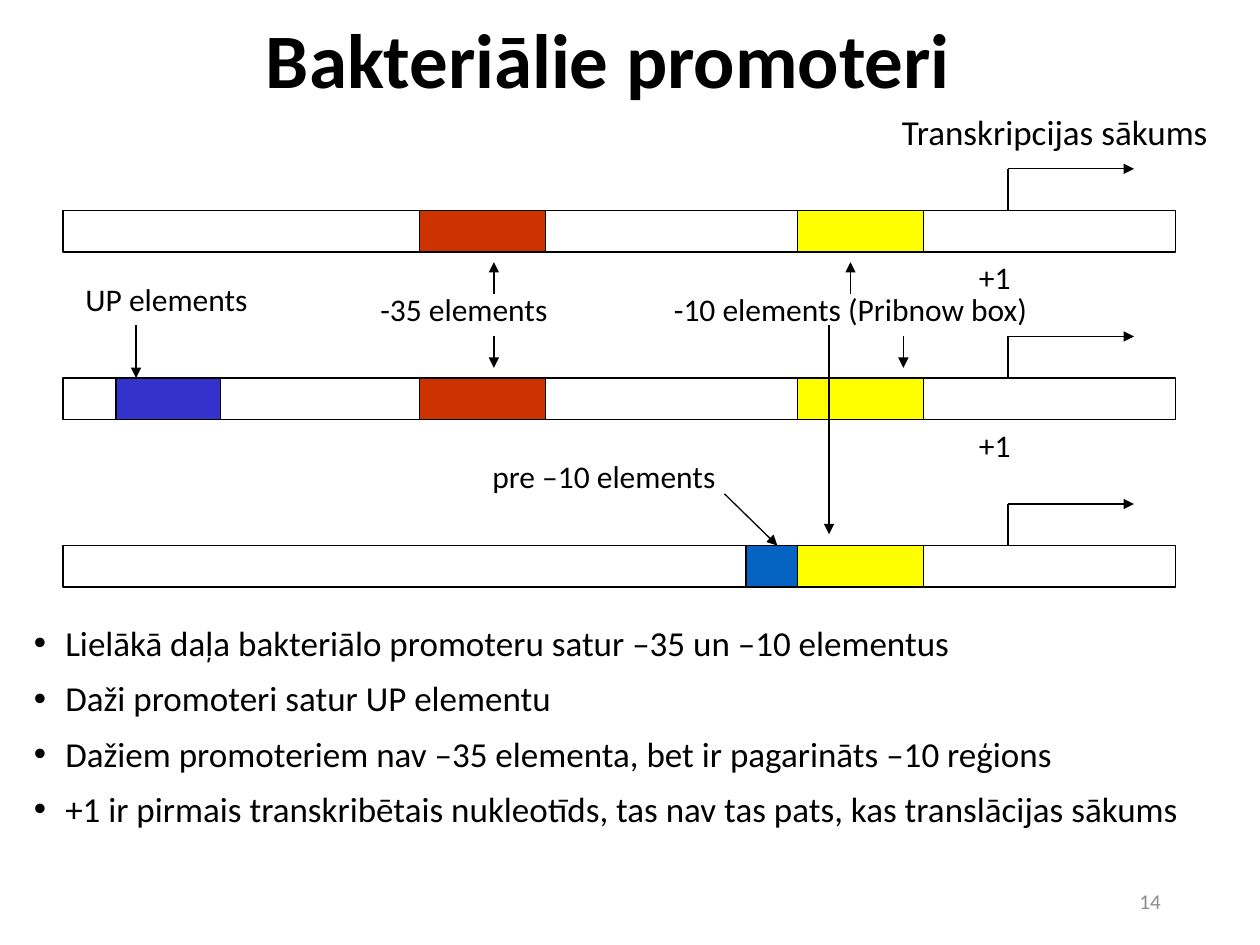
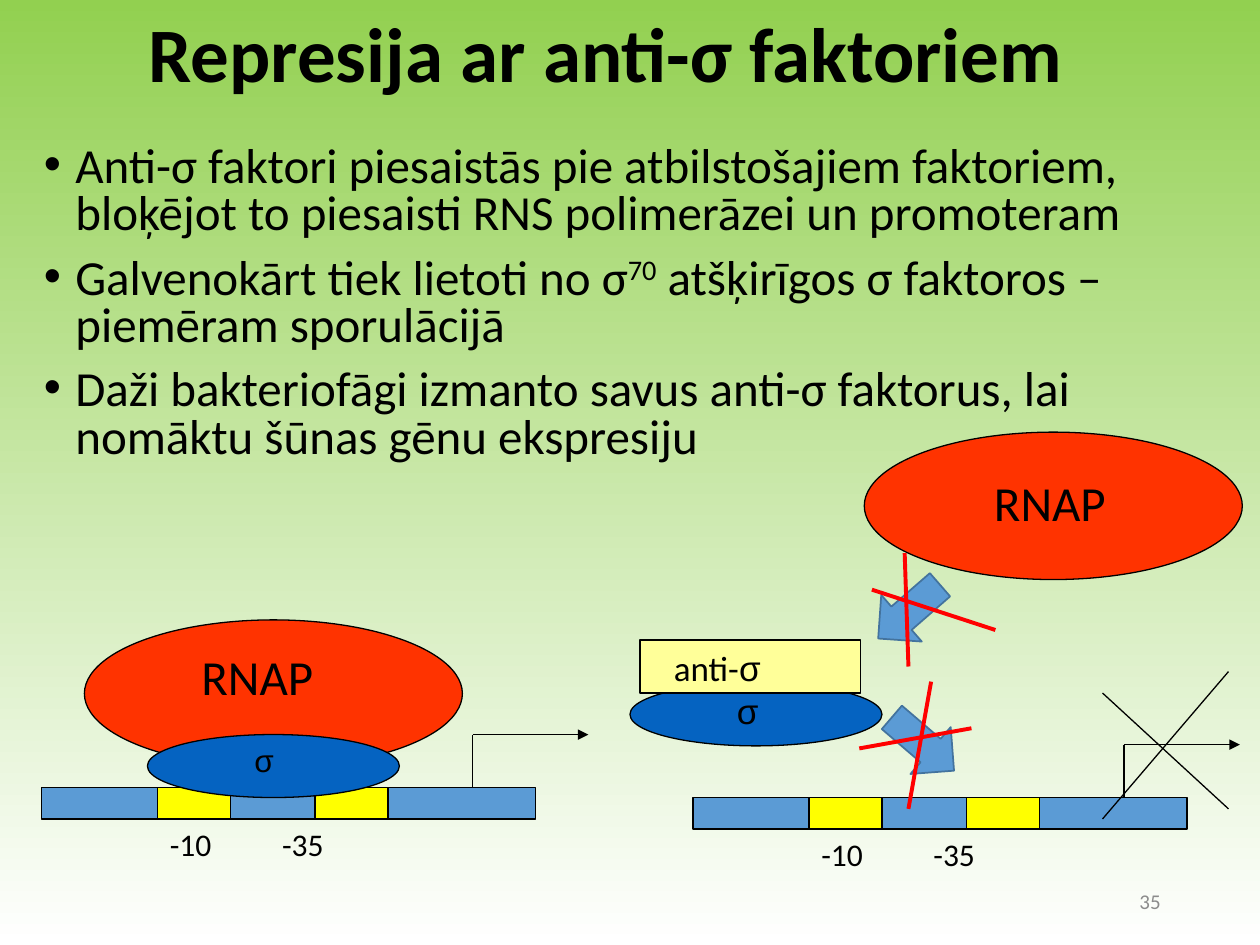
from itertools import pairwise
from lxml.etree import SubElement
from pptx import Presentation
from pptx.dml.color import RGBColor
from pptx.enum.shapes import MSO_CONNECTOR, MSO_SHAPE
from pptx.enum.text import MSO_ANCHOR, PP_ALIGN
from pptx.oxml.ns import qn
from pptx.util import Inches, Pt

BLACK, WHITE, GREY = "000000", "FFFFFF", "8C8C8C"
RED, YELLOW, BLUE = "CC3300", "FFFF00", "0563C1"
VIOLET, SKY, NAVY = "3333CC", "5B9BD5", "43739E"
FLAME, CREAM, CROSS, LIME = "FF3300", "FFFF99", "FF0000", "92D050"
FONT, SIGMA = "Calibri", "Arial"


def paint(color, value):
    color.rgb = RGBColor.from_string(value)


def shape(slide, kind, at, fill, line=BLACK, width=0.75, turn=0):
    item = slide.shapes.add_shape(kind, *map(Inches, at))
    item.shadow.inherit = False
    item.fill.solid()
    paint(item.fill.fore_color, fill)
    paint(item.line.color, line)
    item.line.width = Pt(width)
    item.rotation = turn
    return item


def rect(slide, at, fill):
    return shape(slide, MSO_SHAPE.RECTANGLE, at, fill)


def oval(slide, at, fill):
    return shape(slide, MSO_SHAPE.OVAL, at, fill)


def line(slide, start, end, color=BLACK, width=0.75, arrow=False):
    item = slide.shapes.add_connector(
        MSO_CONNECTOR.STRAIGHT, *map(Inches, (*start, *end)))
    paint(item.line.color, color)
    item.line.width = Pt(width)
    if arrow:
        SubElement(item.line._get_or_add_ln(), qn("a:tailEnd"), type="triangle")
    SubElement(item._element.spPr, qn("a:effectLst"))


def arrow(slide, start, end):
    line(slide, start, end, arrow=True)


def bullet(para):
    props = para._p.get_or_add_pPr()
    props.set("marL", str(Inches(0.25)))
    props.set("indent", str(-Inches(0.25)))
    SubElement(props, qn("a:buFont"), typeface="Arial")
    SubElement(props, qn("a:buChar"), char="•")


def text(slide, at, *paras, size=18, font=FONT, color=BLACK, bold=False,
         align=PP_ALIGN.LEFT, anchor=MSO_ANCHOR.TOP, space=1, dots=False):
    frame = slide.shapes.add_textbox(*map(Inches, at)).text_frame
    frame.word_wrap = True
    frame.vertical_anchor = anchor
    for i, runs in enumerate(paras):
        para = frame.paragraphs[0] if i == 0 else frame.add_paragraph()
        para.alignment = align
        para.line_spacing = space
        para.space_before = Pt(10 if i else 0)
        if dots:
            bullet(para)
        for part in [(runs, {})] if isinstance(runs, str) else runs:
            words, style = part
            run = para.add_run()
            run.text = words
            run.font.name = style.get("font", font)
            run.font.size = Pt(size)
            run.font.bold = bold
            paint(run.font.color, color)
            if "base" in style:
                run._r.get_or_add_rPr().set("baseline", str(style["base"]))


def title(slide, at, words, align=PP_ALIGN.LEFT):
    text(slide, at, words, size=44, bold=True, align=align,
         anchor=MSO_ANCHOR.MIDDLE, space=0.9)


def number(slide, value):
    text(slide, (7.06, 6.95, 2.25, 0.4), value, size=12, color=GREY,
         align=PP_ALIGN.RIGHT, anchor=MSO_ANCHOR.MIDDLE)


def start(slide, x, y, rise, reach):
    line(slide, (x, y), (x, y - rise))
    arrow(slide, (x, y - rise), (x + reach, y - rise))


def strip(slide, y, edges, fills):
    for (left, right), fill in zip(pairwise(edges), fills):
        rect(slide, (left, y, right - left, 0.33), fill)


def gene(slide, x, y):
    rect(slide, (x, y, 3.92, 0.25), SKY)
    for step, shift, label in ((0.92, 0.92, "-10"), (2.17, 1.81, "-35")):
        rect(slide, (x + step, y, 0.58, 0.25), YELLOW)
        text(slide, (x + shift, y + 0.25, 0.8, 0.4), label)
    start(slide, x + 3.42, y, 0.42, 0.92)


def block(slide, at, turn, *bars):
    shape(slide, MSO_SHAPE.DOWN_ARROW, at, SKY, NAVY, 1, turn)
    for tip, end in bars:
        line(slide, tip, end, CROSS, 2.25)


def promoters(slide):
    title(slide, (0.58, 0.09, 8.5, 0.83), "Bakteriālie promoteri", PP_ALIGN.CENTER)
    text(slide, (0.17, 4.92, 9.83, 2.58),
         "Lielākā daļa bakteriālo promoteru satur –35 un –10 elementus",
         "Daži promoteri satur UP elementu",
         "Dažiem promoteriem nav –35 elementa, bet ir pagarināts –10 reģions",
         "+1 ir pirmais transkribētais nukleotīds, tas nav tas pats, kas translācijas sākums",
         size=20, space=0.9, dots=True)

    core = (3.33, 4.33, 6.33, 7.33, 9.33)
    fills = (RED, WHITE, YELLOW, WHITE)
    rows = (
        (1.67, (0.5, *core), (WHITE, *fills)),
        (3, (0.5, 0.92, 1.75, *core), (WHITE, VIOLET, WHITE, *fills)),
        (4.33, (0.5, 5.92, 6.33, 7.33, 9.33), (WHITE, BLUE, YELLOW, WHITE)),
    )
    for y, edges, colors in rows:
        strip(slide, y, edges, colors)
        start(slide, 8, y, 0.33, 1)

    for x, y, width, label in (
        (2.92, 2.25, 3.33, "-35 elements"),
        (5.25, 2.25, 4.08, "-10 elements (Pribnow box)"),
        (0.58, 2.17, 2.08, "UP elements"),
        (3.81, 3.58, 2.17, "pre –10 elements"),
        (7.67, 2, 0.75, "+1"),
        (7.67, 3.33, 0.75, "+1"),
    ):
        text(slide, (x, y, width, 0.4), label)
    text(slide, (7.06, 0.83, 2.94, 0.44), "Transkripcijas sākums", size=20)

    for x, top, end in ((1.08, 2.58, 3), (3.92, 2.33, 2.08), (3.92, 2.67, 2.92),
                        (6.75, 2.33, 2.08), (7.17, 2.67, 2.92), (6.58, 2.58, 4.24)):
        arrow(slide, (x, top), (x, end))
    arrow(slide, (5.75, 3.92), (6.17, 4.33))
    number(slide, "14")


def repression(slide):
    fill = slide.background.fill
    fill.gradient()
    fill.gradient_angle = 270
    for stop, color in zip(fill.gradient_stops, (LIME, WHITE)):
        paint(stop.color, color)

    oval(slide, (0.67, 4.92, 3, 1.17), FLAME)
    title(slide, (1.08, -0.17, 8.5, 1.25), "Represija ar anti-σ faktoriem")
    text(slide, (0.25, 1.11, 9.5, 2.83),
         "Anti-σ faktori piesaistās pie atbilstošajiem faktoriem, "
         "bloķējot to piesaisti RNS polimerāzei un promoteram",
         [("Galvenokārt tiek lietoti no σ", {}), ("70", {"base": 30000}),
          (" atšķirīgos σ faktoros – piemēram sporulācijā", {})],
         "Daži bakteriofāgi izmanto savus anti-σ faktorus, "
         "lai nomāktu šūnas gēnu ekspresiju",
         size=28, space=0.8, dots=True)

    gene(slide, 0.33, 6.25)
    oval(slide, (1.17, 5.83, 2, 0.5), BLUE)
    text(slide, (1.5, 5.08, 1.42, 0.57), "RNAP", size=28)
    text(slide, (1.92, 5.83, 1, 0.5), "σ", font=SIGMA)

    oval(slide, (6.86, 3.43, 3, 1.17), FLAME)
    gene(slide, 5.5, 6.33)
    oval(slide, (5, 5.42, 2, 0.5), BLUE)
    text(slide, (7.79, 3.7, 1.42, 0.57), "RNAP", size=28)
    text(slide, (5.75, 5.42, 1, 0.44), "σ", size=20, font=SIGMA)
    rect(slide, (5.08, 5.08, 1.75, 0.42), CREAM)
    text(slide, (5.25, 5.08, 1.5, 0.44),
         [("anti-", {}), ("σ", {"font": SIGMA})], size=20)

    line(slide, (8.75, 5.5), (9.75, 6.42))
    line(slide, (9.75, 5.33), (8.75, 6.5))
    block(slide, (6.97, 4.53, 0.49, 0.65), 49,
          ((7.18, 4.39), (7.21, 5.29)), ((6.92, 4.68), (7.9, 5)))
    block(slide, (7.08, 5.58, 0.49, 0.65), 310.6,
          ((6.82, 5.94), (7.71, 5.78)), ((7.21, 6.42), (7.39, 5.41)))
    number(slide, "35")


def main():
    deck = Presentation()
    deck.slide_width, deck.slide_height = Inches(10), Inches(7.5)
    for build in (promoters, repression):
        build(deck.slides.add_slide(deck.slide_layouts[6]))
    deck.save("out.pptx")


if __name__ == "__main__":
    main()
